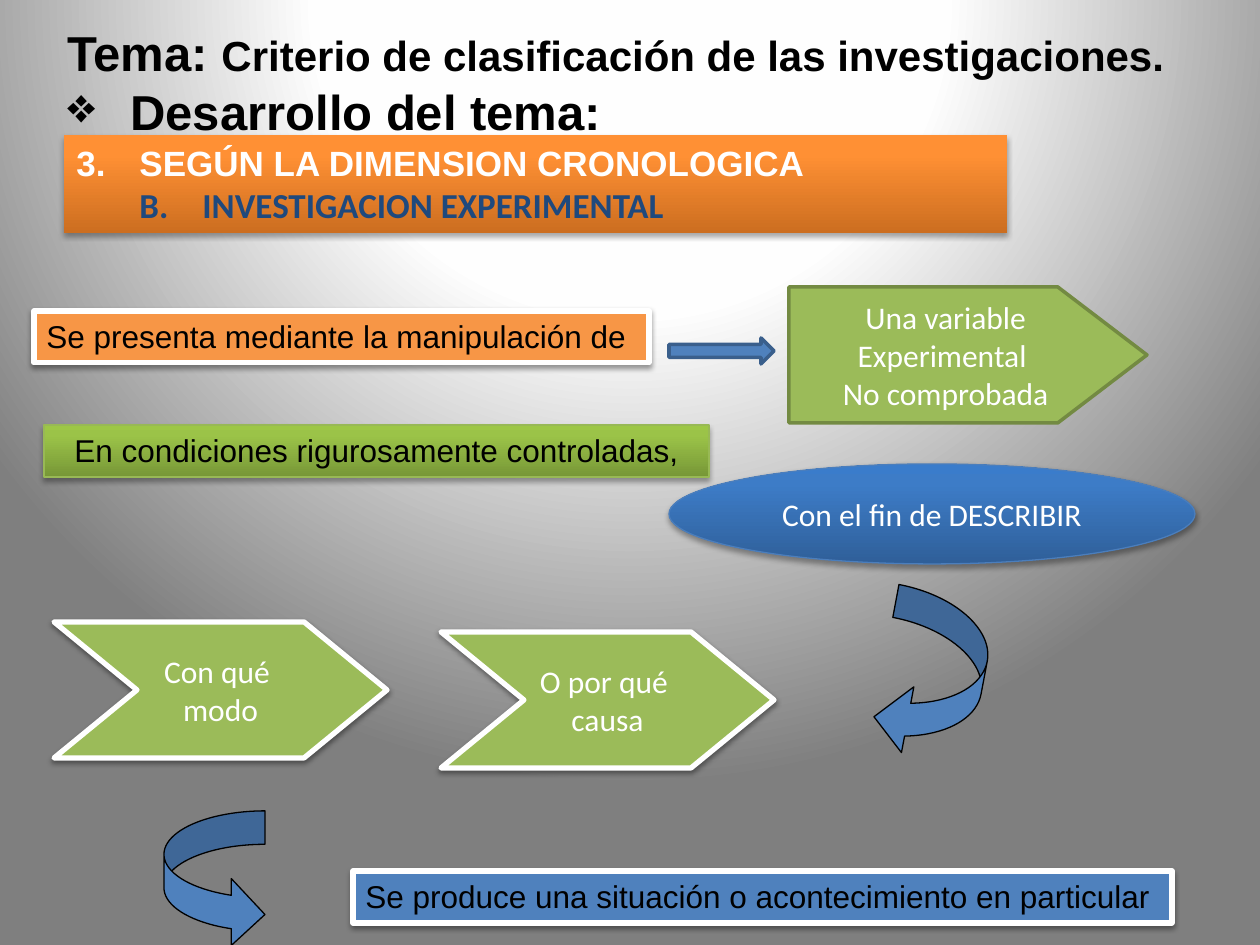
from lxml import etree
from pptx import Presentation
from pptx.dml.color import RGBColor
from pptx.enum.shapes import MSO_SHAPE as SHAPE
from pptx.enum.text import MSO_ANCHOR as ANCHOR, MSO_AUTO_SIZE as AUTO, PP_ALIGN as ALIGN
from pptx.oxml.ns import qn
from pptx.util import Pt

PX = 914400 // 126
SLIDE_SIZE = (1260, 945)

COLORS = {
    "black": "000000", "white": "FFFFFF", "navy": "1F497D",
    "blue": "4F81BD", "blue_edge": "3A5F8C", "ellipse_edge": "4B7EBC",
    "green": "9BBB59", "green_edge": "738A42", "band_edge": "98B955",
    "orange": "F79646",
}
# Stops run from the bottom up; the backdrop runs from its centre outwards.
GRADIENTS = {
    "orange_fade": [(0, "CC6E20"), (80, "FF9034"), (100, "FF9136")],
    "green_fade": [(0, "779737"), (80, "9BC348"), (100, "9DC746")],
    "blue_fade": [(0, "2F5F99"), (80, "3D7CC7"), (100, "3A7CCB")],
    "backdrop": [(0, "FFFFFF"), (40, "FEFEFE"), (100, "7F7F7F")],
}
UPWARDS = '<a:lin ang="16200000" scaled="0"/>'
FROM_TOP = ('<a:path path="circle"><a:fillToRect l="50000" t="-80000" '
            'r="50000" b="180000"/></a:path>')

SOFT = dict(opacity=38, distance=1.6)
DEEP = dict(opacity=35, distance=1.8)

# Text is a list of paragraphs, each a list of (words, run format).
TITLE = [
    [("Tema: ", dict(size=28)),
     ("Criterio de clasificación de las investigaciones.", dict(size=24))],
    [("Desarrollo del tema:", dict(size=28))],
]
HEADING = [
    [("SEGÚN LA DIMENSION CRONOLOGICA", {})],
    [("INVESTIGACION EXPERIMENTAL", dict(font="Calibri", color="navy"))],
]
TITLE_BULLETS = [None, (0.5, '<a:buChar char="❖"/>')]
HEADING_BULLETS = [
    (0.5, '<a:buAutoNum type="arabicPeriod" startAt="3"/>'),
    (1, '<a:buAutoNum type="alphaUcPeriod" startAt="2"/>'),
]

LABEL = dict(font="Calibri", color="white", align=ALIGN.CENTER,
             anchor=ANCHOR.MIDDLE, wrap=False)
CHEVRON = dict(adjust=[0.61], fill="green", line=("white", 3), shadow=SOFT)
CURVED = dict(adjust=[0.331, 0.662, 0.333], fill="blue", line=("black", 0.75))
FRAMED = dict(line=("white", 3), shadow=SOFT)

# preset, (left, top, width, height), look, lines of text, text format
PARTS = [
    (SHAPE.PENTAGON, (789, 287, 358, 136),
     dict(adjust=[0.656], fill="green", line=("green_edge", 2)),
     ["Una variable", "Experimental ", "No comprobada"], LABEL),
    (SHAPE.CURVED_DOWN_ARROW, (849, 626, 168, 101), dict(CURVED, rotation=100.7), [], {}),
    (SHAPE.CHEVRON, (54, 622, 333, 136), CHEVRON, ["Con qué ", "modo"], LABEL),
    (SHAPE.RECTANGLE, (34, 311, 615, 52), dict(FRAMED, fill="orange"),
     ["Se presenta mediante la manipulación de"], {}),
    (SHAPE.RECTANGLE, (44, 425, 665, 52),
     dict(fill="green_fade", line=("band_edge", 0.75), shadow=DEEP),
     ["En condiciones rigurosamente controladas,"], dict(align=ALIGN.CENTER)),
    (SHAPE.OVAL, (669, 464, 526, 100),
     dict(fill="blue_fade", line=("ellipse_edge", 0.75), shadow=DEEP),
     ["Con el fin de DESCRIBIR"], LABEL),
    (SHAPE.CHEVRON, (441, 632, 333, 136), CHEVRON, ["O por qué ", "causa"], LABEL),
    (SHAPE.RECTANGLE, (353, 871, 819, 52), dict(FRAMED, fill="blue"),
     ["Se produce una situación o acontecimiento en particular"], dict(wrap=False)),
    (SHAPE.CURVED_RIGHT_ARROW, (164, 811, 101, 137), CURVED, [], {}),
]
TITLE_BOX = (55, 16, 1179, 131)
HEADING_BOX = (64, 135, 943, 98)
ARROW_BOX = (669, 338, 105, 26)


def rgb(name):
    return RGBColor.from_string(COLORS[name])


def xml(markup):
    """Parse one element written with the a: prefix."""
    ns = "http://schemas.openxmlformats.org/drawingml/2006/main"
    return etree.fromstring(f'<a:x xmlns:a="{ns}">{markup}</a:x>')[0]


def set_gradient(fill, owner, name, direction=UPWARDS):
    fill.gradient()
    stops = "".join(f'<a:gs pos="{pos * 1000}"><a:srgbClr val="{color}"/></a:gs>'
                    for pos, color in GRADIENTS[name])
    default = next(owner.iter(qn("a:gradFill")))
    default.getparent().replace(default, xml(
        f'<a:gradFill rotWithShape="1"><a:gsLst>{stops}</a:gsLst>{direction}</a:gradFill>'))


def add_part(slide, preset, box, fill, line=None, shadow=None, adjust=(), rotation=0):
    part = slide.shapes.add_shape(preset, *(n * PX for n in box))
    part.rotation = rotation
    for i, value in enumerate(adjust):
        part.adjustments[i] = value
    if fill in GRADIENTS:
        set_gradient(part.fill, part.element.spPr, fill)
    else:
        part.fill.solid()
        part.fill.fore_color.rgb = rgb(fill)
    if line:
        color, width = line
        part.line.color.rgb = rgb(color)
        part.line.width = Pt(width)
    else:
        part.line.fill.background()
    part.shadow.inherit = False
    if shadow:
        part.element.spPr.find(qn("a:effectLst")).append(xml(
            f'<a:outerShdw blurRad="{Pt(3.1)}" dist="{Pt(shadow["distance"])}" '
            'dir="5400000" rotWithShape="0"><a:srgbClr val="000000">'
            f'<a:alpha val="{shadow["opacity"] * 1000}"/></a:srgbClr></a:outerShdw>'))
    return part


def write(shape, paragraphs, size=18, font="Arial", color="black", bold=False,
          align=ALIGN.LEFT, anchor=ANCHOR.TOP, wrap=True, bullets=()):
    frame = shape.text_frame
    frame.word_wrap = wrap
    frame.vertical_anchor = anchor
    frame.auto_size = AUTO.SHAPE_TO_FIT_TEXT if anchor == ANCHOR.TOP else AUTO.NONE
    for i, pieces in enumerate(paragraphs):
        paragraph = frame.paragraphs[0] if i == 0 else frame.add_paragraph()
        paragraph.alignment = align
        for words, own in pieces:
            run = paragraph.add_run()
            run.text = words
            run.font.size = Pt(own.get("size", size))
            run.font.name = own.get("font", font)
            run.font.color.rgb = rgb(own.get("color", color))
            run.font.bold = bold
        if i < len(bullets) and bullets[i]:
            indent, mark = bullets[i]
            properties = paragraph._p.get_or_add_pPr()
            properties.set("marL", str(int(indent * 914400)))
            properties.set("indent", "-457200")
            properties.append(xml(mark))


def main():
    deck = Presentation()
    deck.slide_width, deck.slide_height = (n * PX for n in SLIDE_SIZE)
    slide = deck.slides.add_slide(deck.slide_layouts[6])
    set_gradient(slide.background.fill, slide.element, "backdrop", FROM_TOP)

    for preset, box, look, lines, text_format in PARTS:
        part = add_part(slide, preset, box, **look)
        if lines:
            write(part, [[(line, {})] for line in lines], **text_format)

    title = slide.shapes.add_textbox(*(n * PX for n in TITLE_BOX))
    write(title, TITLE, bold=True, bullets=TITLE_BULLETS)
    heading = add_part(slide, SHAPE.RECTANGLE, HEADING_BOX, "orange_fade", shadow=DEEP)
    write(heading, HEADING, size=20, color="white", bold=True, bullets=HEADING_BULLETS)
    add_part(slide, SHAPE.RIGHT_ARROW, ARROW_BOX, "blue", line=("blue_edge", 2))

    deck.save("out.pptx")


if __name__ == "__main__":
    main()
